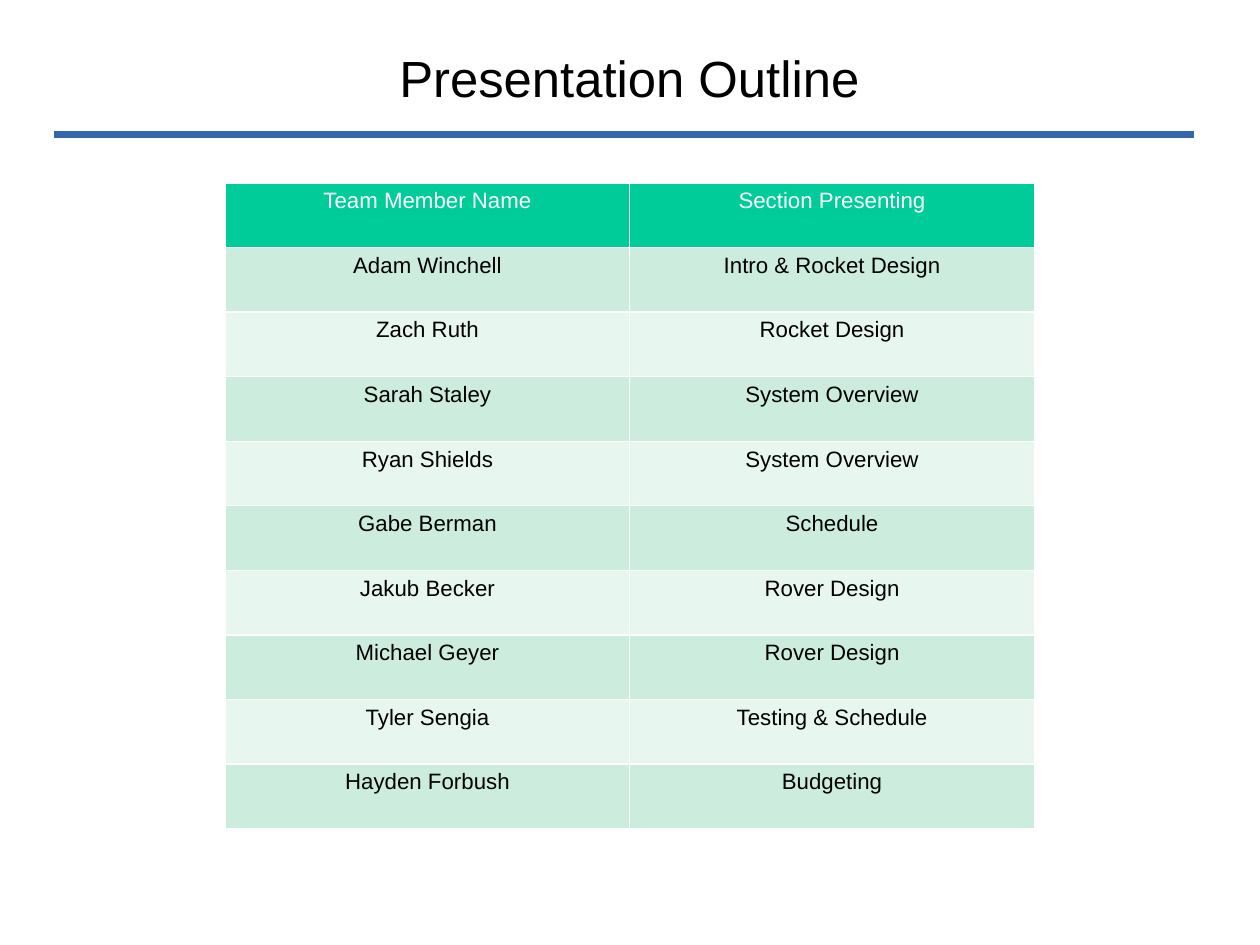
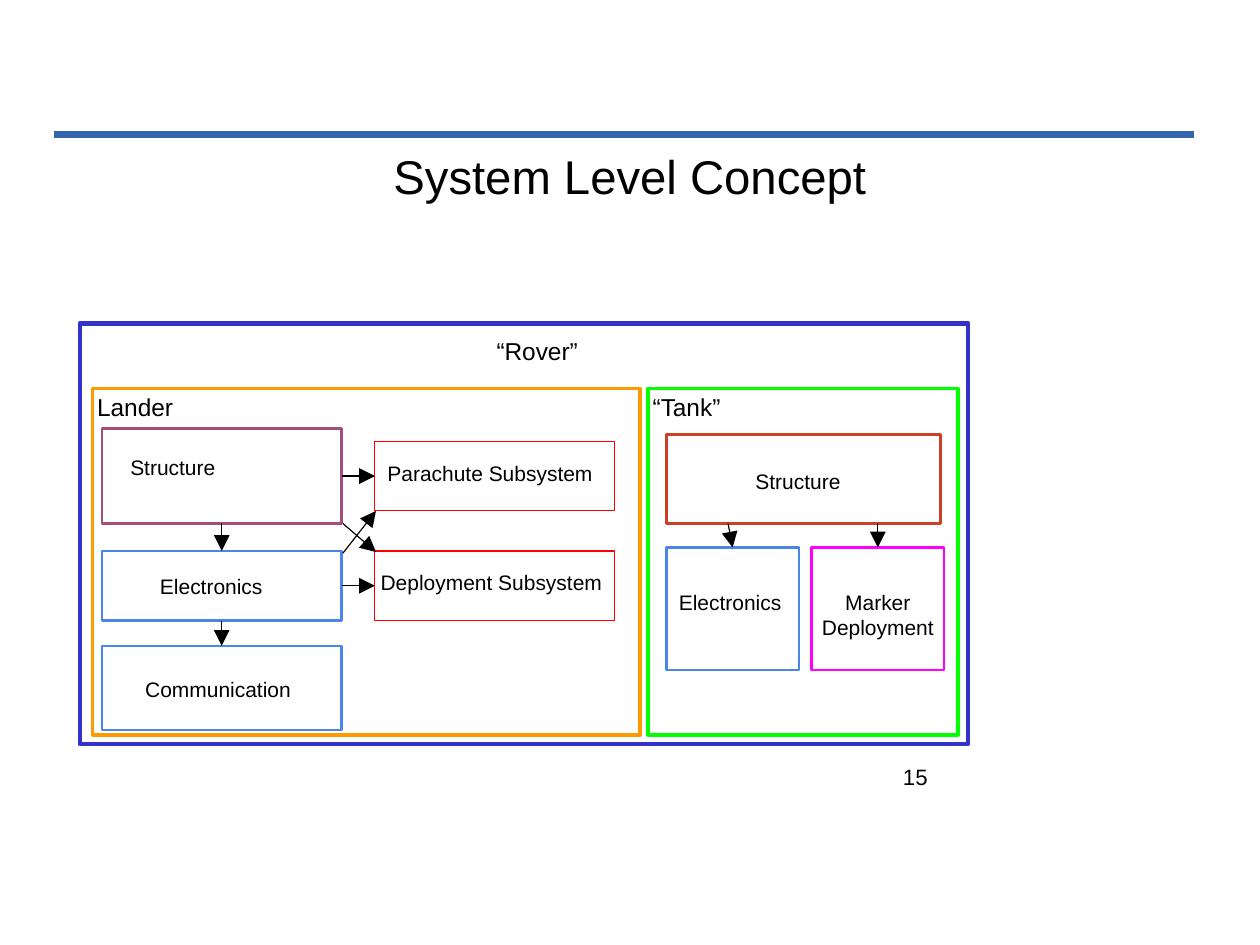
import lxml.etree
import pptx
import pptx.dml.color
import pptx.enum.shapes
import pptx.enum.text
import pptx.oxml
import pptx.oxml.ns
import pptx.util

Inches, Pt, Cm = pptx.util.Inches, pptx.util.Pt, pptx.util.Cm
ALIGN, ANCHOR = pptx.enum.text.PP_ALIGN, pptx.enum.text.MSO_ANCHOR
qn = pptx.oxml.ns.qn

WIDTH, HEIGHT = Cm(28), Cm(21)
FONT, BLACK, WHITE, RULE = "Arial", "000000", "FFFFFF", "3465AF"
HEADER, BANDS = "00CC99", ("CCECDE", "E7F6EF")
BLUE, RED = "4A86E8", "FF0000"
TITLE_LEFT, TITLE_WIDTH = 0.55, 9.92

OUTLINE = [
    ("Team Member Name", "Section Presenting"),
    ("Adam Winchell", "Intro & Rocket Design"),
    ("Zach Ruth", "Rocket Design"),
    ("Sarah Staley", "System Overview"),
    ("Ryan Shields", "System Overview"),
    ("Gabe Berman", "Schedule"),
    ("Jakub Becker", "Rover Design"),
    ("Michael Geyer", "Rover Design"),
    ("Tyler Sengia", "Testing & Schedule"),
    ("Hayden Forbush", "Budgeting"),
]

LANDER_X, SUBSYSTEM_X, TANK_X = 0.89, 3.28, 5.83
WIDE, SUBSYSTEM_H = 2.1, 0.61
TANK_PART, TANK_GAP, TANK_Y = 1.16, 0.11, 4.79
FRAME_Y, FRAME_H = 3.4, 3.03
MARKER_X = TANK_X + TANK_PART + TANK_GAP

FRAMES = {
    "rover": (["“Rover”"], (0.7, 2.83, 7.77, 3.68), "3333CC", 3, (0.23, 0.11), True),
    "lander": (["Lander"], (0.81, FRAME_Y, 4.79, FRAME_H), "FF9900", 2.25, (0.04, 0.03), False),
    "tank": (["“Tank”"], (5.67, FRAME_Y, 2.71, FRAME_H), "00FF00", 2.25, (0.04, 0.03), False),
}
PARTS = {
    "structure": (["Structure"], (LANDER_X, 3.75, WIDE, 0.83), "A64D79", 1.5, (0.25, 0.23), False),
    "electronics": (["Electronics"], (LANDER_X, 4.82, WIDE, SUBSYSTEM_H), BLUE, 1.5, (0.51, 0.2), False),
    "communication": (["Communication"], (LANDER_X, 5.65, WIDE, 0.74), BLUE, 1.5, (0.38, 0.27), False),
    "parachute": (["Parachute Subsystem"], (SUBSYSTEM_X, 3.86, WIDE, SUBSYSTEM_H), RED, 0.75, (0.11, 0.17), False),
    "deployment": (["Deployment Subsystem"], (SUBSYSTEM_X, 4.82, WIDE, SUBSYSTEM_H), RED, 0.75, (0.05, 0.16), False),
    "tank structure": (["Structure"], (TANK_X, 3.8, 2.4, 0.78), "CC4125", 1.5, (0.78, 0.3), False),
    "tank electronics": (["Electronics"], (TANK_X, TANK_Y, TANK_PART, 1.07), BLUE, 1.5, (0.11, 0.37), False),
    "marker": (["Marker", "Deployment"], (MARKER_X, TANK_Y, TANK_PART, 1.07), "FF00FF", 1.5, (0, 0.37), True),
}
TOP, LEFT, BOTTOM, RIGHT = range(4)
ARROWS = [
    (("structure", BOTTOM), ("electronics", TOP)),
    (("electronics", BOTTOM), ("communication", TOP)),
    (("structure", RIGHT), ("parachute", LEFT)),
    (("electronics", RIGHT), ("deployment", LEFT)),
    ((3, 4.58), (3.29, 4.83)),
    ((3, 4.84), (3.29, 4.47)),
    ((6.37, 4.58), ("tank electronics", TOP)),
    ((7.68, 4.58), ("marker", TOP)),
]


def color(value):
    return pptx.dml.color.RGBColor.from_string(value)


def write(frame, lines, size, ink=BLACK, align=ALIGN.LEFT, anchor=ANCHOR.TOP, inset=(0, 0), spacing=None):
    frame.word_wrap = True
    frame.auto_size = pptx.enum.text.MSO_AUTO_SIZE.NONE
    frame.vertical_anchor = anchor
    frame.margin_left, frame.margin_top = map(Inches, inset)
    frame.margin_right = frame.margin_bottom = 0
    for index, line in enumerate(lines):
        paragraph = frame.paragraphs[0] if index == 0 else frame.add_paragraph()
        style_run(paragraph, line, size, ink, align)
        if spacing:
            paragraph.line_spacing = spacing


def style_run(paragraph, line, size, ink, align):
    paragraph.alignment = align
    run = paragraph.add_run()
    run.text = line
    run.font.name, run.font.size, run.font.bold = FONT, Pt(size), False
    run.font.color.rgb = color(ink)


def add_line(slide, start, end, ink, width):
    line = slide.shapes.add_connector(
        pptx.enum.shapes.MSO_CONNECTOR.STRAIGHT, *map(Inches, (*start, *end)))
    line.line.color.rgb = color(ink)
    line.line.width = Pt(width)
    lxml.etree.SubElement(line.element.spPr, qn("a:effectLst"))
    return line


def add_titled_slide(deck, title, top, height, size, inset):
    slide = deck.slides.add_slide(deck.slide_layouts[5])
    heading = slide.shapes.title
    heading.left, heading.top = Inches(TITLE_LEFT), Inches(top)
    heading.width, heading.height = Inches(TITLE_WIDTH), Inches(height)
    write(heading.text_frame, [title], size, align=ALIGN.CENTER, anchor=ANCHOR.MIDDLE,
          inset=(0, inset), spacing=0.94)
    return slide


def border(cell):
    properties = cell._tc.get_or_add_tcPr()
    for index, side in enumerate("LRTB"):
        edge = pptx.oxml.parse_xml(
            f'<a:ln{side} xmlns:a="http://schemas.openxmlformats.org/drawingml/2006/main" w="12700">'
            f'<a:solidFill><a:srgbClr val="{WHITE}"/></a:solidFill></a:ln{side}>')
        properties.insert(index, edge)


def add_outline(slide):
    table = slide.shapes.add_table(
        len(OUTLINE), len(OUTLINE[0]), Inches(1.97), Inches(1.6), Inches(7.08), Inches(5.65)).table
    table.first_row = table.horz_banding = False
    for row, entries in enumerate(OUTLINE):
        fill, ink = (BANDS[(row - 1) % 2], BLACK) if row else (HEADER, WHITE)
        for column, entry in enumerate(entries):
            cell = table.cell(row, column)
            cell.fill.solid()
            cell.fill.fore_color.rgb = color(fill)
            border(cell)
            style_run(cell.text_frame.paragraphs[0], entry, 14, ink, ALIGN.CENTER)


def add_box(slide, lines, place, edge, width, inset, centred, size):
    box = slide.shapes.add_shape(pptx.enum.shapes.MSO_SHAPE.RECTANGLE, *map(Inches, place))
    box.shadow.inherit = False
    box.fill.background()
    box.line.color.rgb = color(edge)
    box.line.width = Pt(width)
    write(box.text_frame, lines, size, inset=inset, align=ALIGN.CENTER if centred else ALIGN.LEFT)
    return box


def add_arrow(slide, boxes, start, end):
    points = [(0, 0) if point[0] in boxes else point for point in (start, end)]
    arrow = add_line(slide, *points, BLACK, 0.75)
    for point, connect in ((start, arrow.begin_connect), (end, arrow.end_connect)):
        if point[0] in boxes:
            connect(boxes[point[0]], point[1])
    head = lxml.etree.SubElement(arrow.line._get_or_add_ln(), qn("a:tailEnd"))
    for key, value in (("type", "triangle"), ("w", "lg"), ("len", "lg")):
        head.set(key, value)


def add_concept(slide):
    boxes = {}
    for group, size in ((FRAMES, 15.4), (PARTS, 13.2)):
        for name, box in group.items():
            boxes[name] = add_box(slide, *box, size)
    for start, end in ARROWS:
        add_arrow(slide, boxes, start, end)
    number = slide.shapes.add_textbox(Inches(7.9), Inches(6.68), Inches(2.56), Inches(0.42))
    write(number.text_frame, ["15"], 14)


def main():
    deck = pptx.Presentation()
    deck.slide_width, deck.slide_height = WIDTH, HEIGHT
    outline = add_titled_slide(deck, "Presentation Outline", 0.33, 0.72, 32, 0.03)
    rule = add_line(outline, (0.47, 1.18), (10.45, 1.18), RULE, 4.31)
    deck.slide_master.shapes.element.append(rule.element)
    add_outline(outline)
    add_concept(add_titled_slide(deck, "System Level Concept", 1.28, 0.54, 29.8, 0.02))
    deck.save("out.pptx")


if __name__ == "__main__":
    main()
